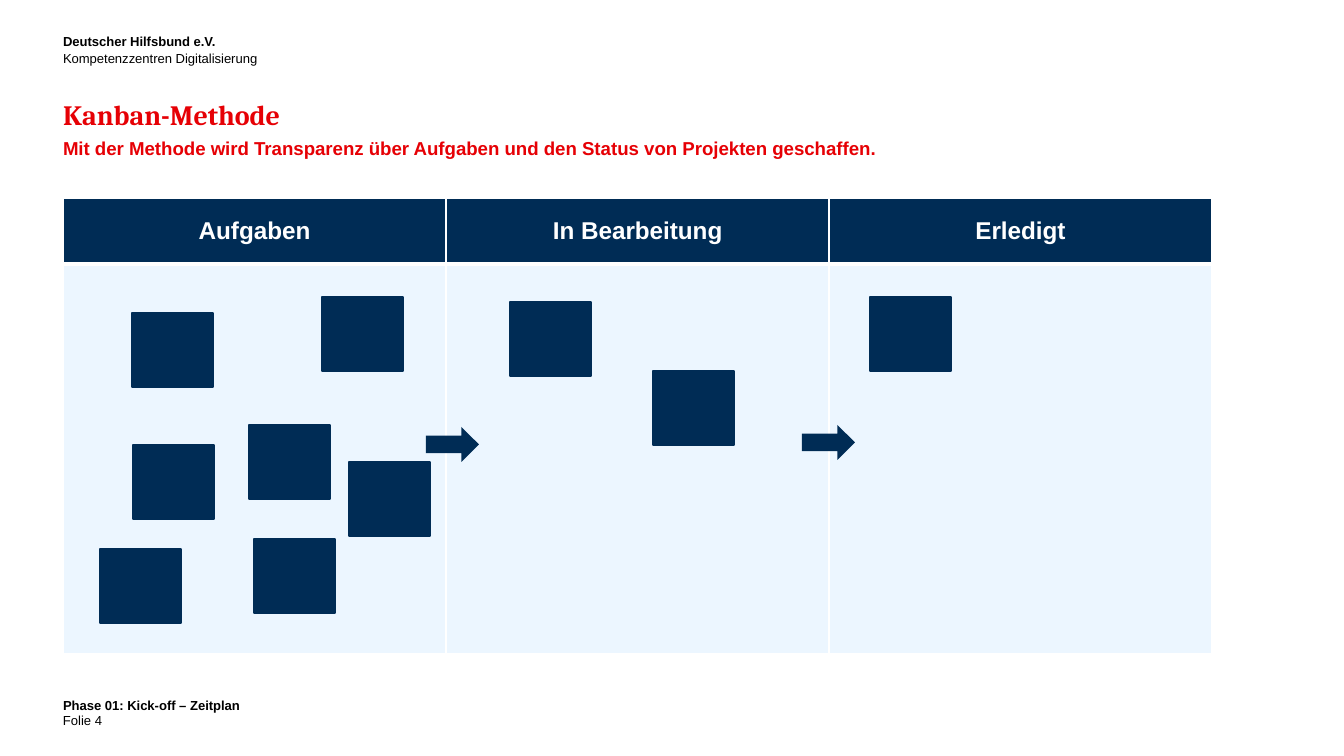
from lxml.etree import SubElement
from pptx import Presentation
from pptx.dml.color import RGBColor
from pptx.enum.shapes import MSO_SHAPE
from pptx.enum.text import MSO_ANCHOR, MSO_AUTO_SIZE, PP_ALIGN
from pptx.oxml.ns import qn
from pptx.util import Emu, Pt

EMU_PER_PX = 914400 / 134.4
NAVY, PALE, RED, WHITE, BLACK = "002C55", "ECF6FF", "E60005", "FFFFFF", "000000"
LEFT, CONTENT_WIDTH = 63, 1218

HEADINGS = ["Aufgaben", "In Bearbeitung", "Erledigt"]
COLUMN_WIDTH, ROW_HEIGHTS = 383, (66, 390)
HEADING_BORDERS = {"lnL": 1, "lnR": 1, "lnT": 1, "lnB": 3}
FIELD_BORDERS = {"lnL": 1, "lnR": 1, "lnB": 1}

NOTE_SIZE = (81, 74)
NOTES = [
    (132, 313), (322, 297), (249, 425), (133, 445), (349, 462), (100, 549), (254, 539),
    (510, 302), (653, 371),
    (870, 297),
]
ARROW_SIZE = (53, 35)
ARROWS = [(426, 427), (802, 425)]


def px(*lengths):
    return [Emu(round(length * EMU_PER_PX)) for length in lengths]


def color(value):
    return RGBColor.from_string(value)


def set_values(target, values):
    for name, value in values.items():
        setattr(target, name, value)


def format_frame(frame, anchor):
    set_values(frame, {
        "margin_left": 0, "margin_top": 0, "margin_right": 0, "margin_bottom": 0,
        "word_wrap": True, "auto_size": MSO_AUTO_SIZE.NONE, "vertical_anchor": anchor,
    })


def add_span(para, text, size, bold=False, font="Arial", shade=BLACK):
    span = para.add_run()
    span.text = text
    set_values(span.font, {"name": font, "size": Pt(size), "bold": bold})
    span.font.color.rgb = color(shade)


def add_text(slide, place, lines, anchor=MSO_ANCHOR.TOP):
    frame = slide.shapes.add_textbox(*px(*place)).text_frame
    format_frame(frame, anchor)
    for index, (text, bold) in enumerate(lines):
        para = frame.add_paragraph() if index else frame.paragraphs[0]
        para.line_spacing = Pt(9)
        add_span(para, text, 7, bold)


def fill_title(title):
    set_values(title, dict(zip(("left", "top", "width", "height"),
                               px(LEFT, 103, CONTENT_WIDTH, 50))))
    format_frame(title.text_frame, MSO_ANCHOR.TOP)
    para = title.text_frame.paragraphs[0]
    set_values(para, {"alignment": PP_ALIGN.LEFT, "line_spacing": Pt(15)})
    add_span(para, "Kanban-Methode", 15, True, "Cambria", RED)
    para.add_line_break()
    add_span(para, "Mit der Methode wird Transparenz über Aufgaben und den Status "
             "von Projekten geschaffen.", 10, True, shade=RED)


def format_cell(cell, fill, borders):
    properties = cell._tc.get_or_add_tcPr()
    for tag, width in borders.items():
        line = SubElement(properties, qn(f"a:{tag}"), w=str(Pt(width)))
        solid = SubElement(line, qn("a:solidFill"))
        SubElement(solid, qn("a:srgbClr"), val=WHITE)
    cell.fill.solid()
    cell.fill.fore_color.rgb = color(fill)


def add_board(slide):
    place = px(LEFT, 198, COLUMN_WIDTH * len(HEADINGS), sum(ROW_HEIGHTS))
    table = slide.shapes.add_table(len(ROW_HEIGHTS), len(HEADINGS), *place).table
    for row, height in zip(table.rows, px(*ROW_HEIGHTS)):
        row.height = height
    for index, heading in enumerate(HEADINGS):
        table.columns[index].width = px(COLUMN_WIDTH)[0]
        cell = table.cell(0, index)
        format_cell(cell, NAVY, HEADING_BORDERS)
        cell.vertical_anchor = MSO_ANCHOR.MIDDLE
        para = cell.text_frame.paragraphs[0]
        para.alignment = PP_ALIGN.CENTER
        add_span(para, heading, 13, True, shade=WHITE)
        format_cell(table.cell(1, index), PALE, FIELD_BORDERS)


def add_mark(slide, kind, position, size, outlined):
    mark = slide.shapes.add_shape(kind, *px(*position, *size))
    mark.shadow.inherit = False
    mark.fill.solid()
    mark.fill.fore_color.rgb = color(NAVY)
    if outlined:
        mark.line.color.rgb = color(NAVY)
        mark.line.width = Pt(1)
    else:
        mark.line.fill.background()


def main():
    deck = Presentation()
    deck.slide_width, deck.slide_height = px(1344, 756)
    slide = deck.slides.add_slide(deck.slide_layouts[5])

    # Header and title
    add_text(slide, (LEFT, 32, 241, 34),
             [("Deutscher Hilfsbund e.V.", True), ("Kompetenzzentren Digitalisierung", False)])
    fill_title(slide.shapes.title)

    # Kanban board with notes and arrows
    add_board(slide)
    for position in NOTES:
        add_mark(slide, MSO_SHAPE.RECTANGLE, position, NOTE_SIZE, True)
    for position in ARROWS:
        add_mark(slide, MSO_SHAPE.RIGHT_ARROW, position, ARROW_SIZE, False)

    # Footer
    add_text(slide, (LEFT, 696, CONTENT_WIDTH, 12), [("Phase 01: Kick-off – Zeitplan", True)])
    add_text(slide, (LEFT, 711, 40, 17), [("Folie", False)], MSO_ANCHOR.BOTTOM)
    add_text(slide, (95, 712, 302, 16), [("4", False)], MSO_ANCHOR.BOTTOM)

    deck.save("out.pptx")


if __name__ == "__main__":
    main()
